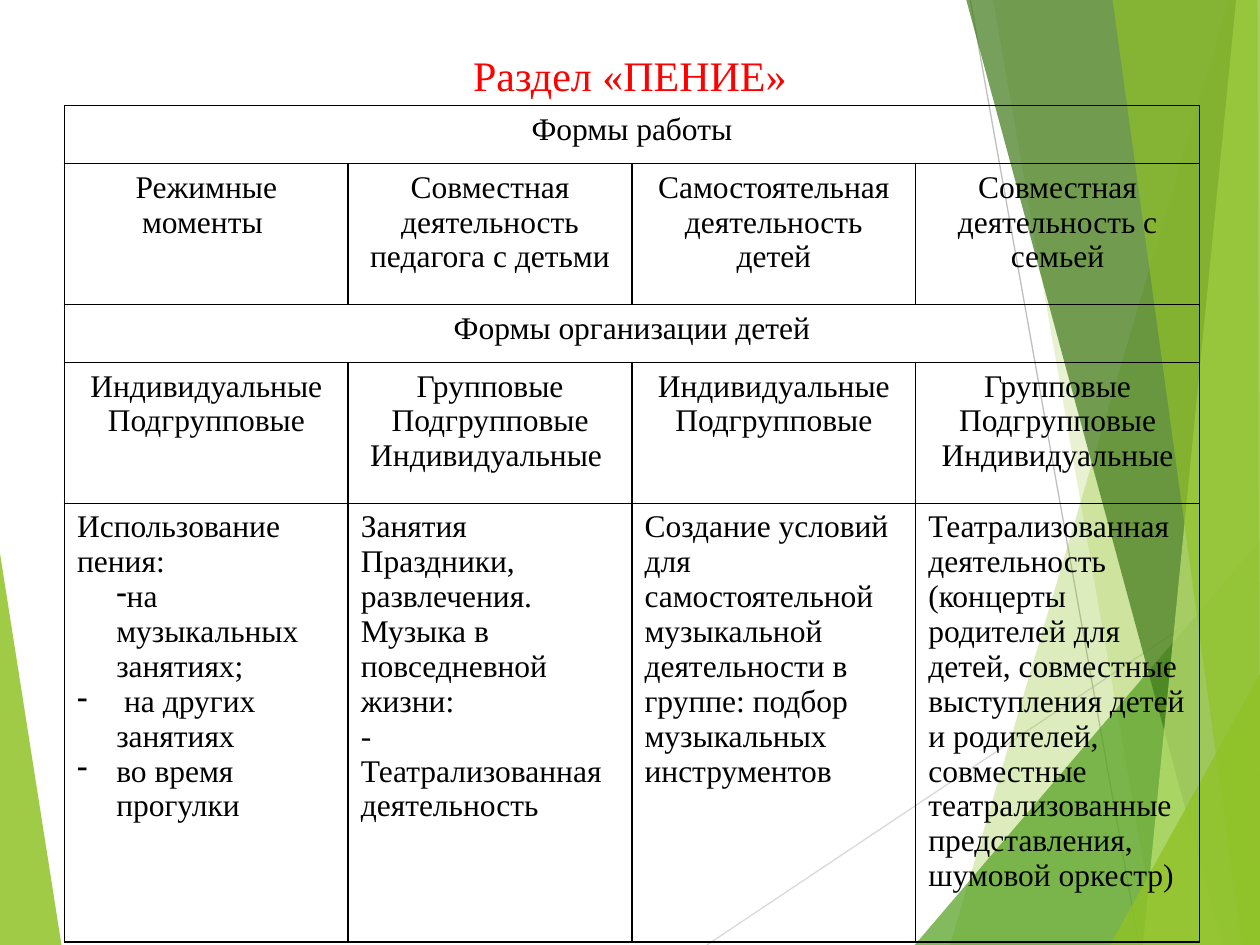
from dataclasses import dataclass

from lxml import etree
from pptx import Presentation
from pptx.dml.color import RGBColor
from pptx.enum.shapes import MSO_CONNECTOR
from pptx.enum.text import MSO_ANCHOR, PP_ALIGN
from pptx.oxml.ns import qn
from pptx.util import Cm, Pt

STRAIGHT = MSO_CONNECTOR.STRAIGHT
TOP = MSO_ANCHOR.TOP
CENTER, LEFT = PP_ALIGN.CENTER, PP_ALIGN.LEFT


@dataclass
class Theme:
    font: str = "Times New Roman"
    title_size: int = 24
    body_size: int = 18
    title: str = "FF0000"
    text: str = "000000"
    green: str = "90C226"
    leaf: str = "54A021"
    forest: str = "3F7819"
    lime: str = "C0E474"
    pale_line: str = "D9D9D9"
    dark_line: str = "BFBFBF"


theme = Theme()
WIDTH, HEIGHT = 25.4, 19.05


def format_paragraph(para, size, color, alignment):
    para.alignment = alignment
    for span in para.runs:
        span.font.name = theme.font
        span.font.size = Pt(size)
        span.font.color.rgb = RGBColor.from_string(color)


def add_border(properties, side):
    line = etree.SubElement(properties, qn(f"a:{side}"), w=str(Pt(1)))
    fill = etree.SubElement(line, qn("a:solidFill"))
    etree.SubElement(fill, qn("a:srgbClr"), val=theme.text)


deck = Presentation()
deck.slide_width, deck.slide_height = Cm(WIDTH), Cm(HEIGHT)
page = deck.slides.add_slide(deck.slide_layouts[6])

rays = [
    (14.25, HEIGHT, WIDTH, 11.6, theme.pale_line),
    (19.56, 0, 22.96, HEIGHT, theme.dark_line),
]
right_top, right_bottom = (WIDTH, 0), (WIDTH, HEIGHT)
facets = [
    ([(0, 11.15), (1.24, HEIGHT), (0, HEIGHT)], theme.green, 85),
    ([(24.77, 0), (19.15, HEIGHT), right_bottom, right_top], theme.green, 30),
    ([(20.02, 0), (23.34, HEIGHT), right_bottom, right_top], theme.green, 20),
    ([(18.44, HEIGHT), (WIDTH, 10.9), right_bottom], theme.leaf, 72),
    ([(19.48, 0), (24.64, HEIGHT), right_bottom, right_top], theme.forest, 70),
    ([(24.92, 0), (23.04, HEIGHT), right_bottom, right_top], theme.lime, 70),
    ([(22.43, 0), (25.04, HEIGHT), right_bottom, (25.35, 0)], theme.green, 65),
    ([(22.38, HEIGHT), (WIDTH, 13.59), right_bottom], theme.green, 80),
]

for x1, y1, x2, y2, color in rays:
    ray = page.shapes.add_connector(STRAIGHT, Cm(x1), Cm(y1), Cm(x2), Cm(y2))
    ray.line.color.rgb = RGBColor.from_string(color)
    ray.line.width = Pt(0.75)
    etree.SubElement(ray.element.spPr, qn("a:effectLst"))

for corners, color, opacity in facets:
    points = [(Cm(x), Cm(y)) for x, y in corners]
    outline = page.shapes.build_freeform(*points[0])
    outline.add_line_segments(points[1:], close=True)
    facet = outline.convert_to_shape()
    facet.shadow.inherit = False
    facet.line.fill.background()
    facet.fill.solid()
    facet.fill.fore_color.rgb = RGBColor.from_string(color)
    tint = facet.element.spPr.find(f"{qn('a:solidFill')}/{qn('a:srgbClr')}")
    etree.SubElement(tint, qn("a:alpha"), val=str(opacity * 1000))

title = page.shapes.add_textbox(Cm(1.27), Cm(0.76), Cm(22.86), Cm(1.75))
frame = title.text_frame
frame.word_wrap = True
frame.vertical_anchor = TOP
frame.margin_top = Cm(0.23)
frame.text = "Раздел «ПЕНИЕ»"
format_paragraph(frame.paragraphs[0], theme.title_size, theme.title, CENTER)

rows = [
    ["Формы работы"],
    [
        "Режимные моменты ",
        "Совместная деятельность педагога с детьми",
        "Самостоятельная деятельность детей",
        "Совместная деятельность с семьей",
    ],
    ["Формы организации детей"],
    [
        "Индивидуальные Подгрупповые",
        "Групповые Подгрупповые Индивидуальные ",
        "Индивидуальные Подгрупповые",
        "Групповые Подгрупповые Индивидуальные",
    ],
    [
        "Использование пения:\nна музыкальных занятиях;\n на других занятиях\nво время прогулки",
        "Занятия Праздники, развлечения. Музыка в повседневной жизни:\n"
        "- Театрализованная деятельность",
        "Создание условий для самостоятельной музыкальной деятельности в группе: "
        "подбор музыкальных инструментов",
        "Театрализованная деятельность (концерты родителей для детей, совместные "
        "выступления детей и родителей, совместные театрализованные представления, "
        "шумовой оркестр)",
    ],
]
heights = [1.17, 2.84, 1.17, 2.84, 8.84]
column_width = 5.72
columns = 4
last_row = len(rows) - 1

table = page.shapes.add_table(
    len(rows), columns, Cm(1.3), Cm(2.13), Cm(column_width * columns), Cm(sum(heights))
).table
table.first_row = False
table.horz_banding = False
for column in table.columns:
    column.width = Cm(column_width)

for row, (texts, height) in enumerate(zip(rows, heights)):
    table.rows[row].height = Cm(height)
    for column in range(columns):
        cell = table.cell(row, column)
        properties = cell._tc.get_or_add_tcPr()
        for side in ("lnL", "lnR", "lnT", "lnB"):
            add_border(properties, side)
        cell.fill.background()
    if len(texts) == 1:
        table.cell(row, 0).merge(table.cell(row, columns - 1))
    for column, text in enumerate(texts):
        cell = table.cell(row, column)
        cell.text_frame.text = text
        for para in cell.text_frame.paragraphs:
            format_paragraph(
                para, theme.body_size, theme.text, LEFT if row == last_row else CENTER
            )

hanging = Cm(0.79)
singing = table.cell(last_row, 0).text_frame.paragraphs[1:]
for para, indent in zip(singing, (0, -hanging, -hanging)):
    properties = para._p.get_or_add_pPr()
    properties.set("marL", str(hanging))
    properties.set("indent", str(indent))
    etree.SubElement(properties, qn("a:buChar"), char="-")

deck.save("out.pptx")
